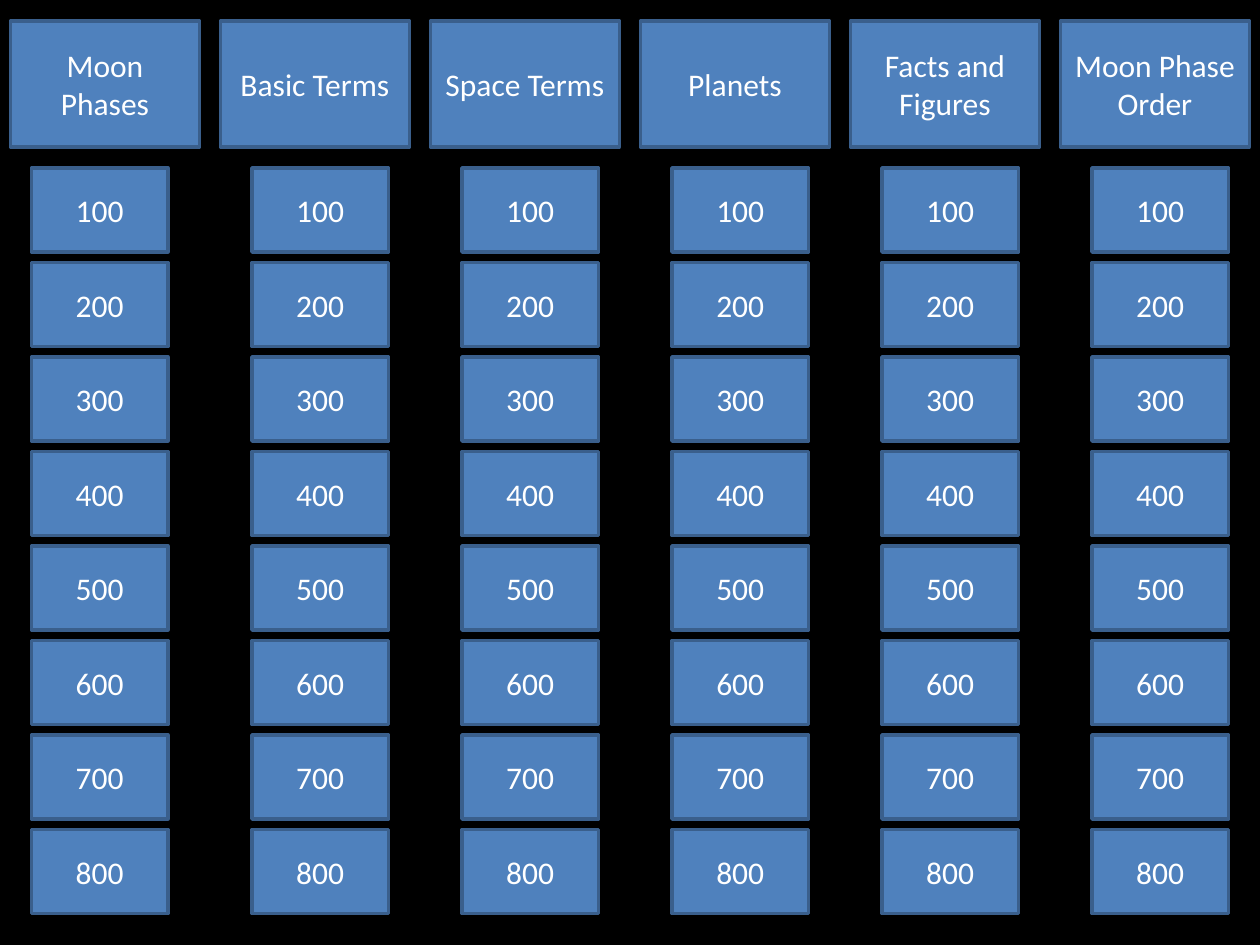
from dataclasses import dataclass

from pptx import Presentation
from pptx.dml.color import RGBColor
from pptx.enum.shapes import MSO_SHAPE
from pptx.enum.text import MSO_ANCHOR, PP_ALIGN
from pptx.slide import Slide
from pptx.util import Inches, Pt

RECTANGLE = MSO_SHAPE.RECTANGLE
MIDDLE = MSO_ANCHOR.MIDDLE
CENTER = PP_ALIGN.CENTER

BLACK, WHITE, BLUE, DARK_BLUE = "000000", "FFFFFF", "4F81BD", "3A5F8C"

# The board is a grid of 120 by 90 units, twelve to the inch
UNIT = Inches(1) // 12
SLIDE_WIDTH, SLIDE_HEIGHT = 120, 90
CATEGORIES = ["Moon Phases", "Basic Terms", "Space Terms", "Planets",
              "Facts and Figures", "Moon Phase Order"]
POINTS = range(100, 900, 100)
COLUMN_STEP = SLIDE_WIDTH // len(CATEGORIES)
ROW_STEP = 9


@dataclass(frozen=True)
class TileStyle:
    left: int
    top: int
    width: int
    height: int


HEADER = TileStyle(left=1, top=2, width=18, height=12)
VALUE = TileStyle(left=4, top=16, width=13, height=8)


def color(hex_value: str) -> RGBColor:
    return RGBColor.from_string(hex_value)


def write_text(shape, text: str, *, size: int = 18, font: str = "Calibri",
               text_color: str = WHITE) -> None:
    frame = shape.text_frame
    frame.word_wrap = True
    frame.vertical_anchor = MIDDLE
    paragraph = frame.paragraphs[0]
    paragraph.alignment = CENTER
    run = paragraph.add_run()
    run.text = text
    run.font.size = Pt(size)
    run.font.name = font
    run.font.color.rgb = color(text_color)


def add_tile(slide: Slide, style: TileStyle, text: str, column: int,
             row: int = 0, shift: int = 0) -> None:
    left = style.left + column * COLUMN_STEP + shift
    top = style.top + row * ROW_STEP
    shape = slide.shapes.add_shape(
        RECTANGLE, left * UNIT, top * UNIT, style.width * UNIT, style.height * UNIT)
    shape.shadow.inherit = False
    shape.fill.solid()
    shape.fill.fore_color.rgb = color(BLUE)
    shape.line.color.rgb = color(DARK_BLUE)
    shape.line.width = Pt(2)
    write_text(shape, text)


def main() -> None:
    presentation = Presentation()
    presentation.slide_width = SLIDE_WIDTH * UNIT
    presentation.slide_height = SLIDE_HEIGHT * UNIT
    slide = presentation.slides.add_slide(presentation.slide_layouts[6])
    slide.background.fill.solid()
    slide.background.fill.fore_color.rgb = color(BLACK)

    for column, category in enumerate(CATEGORIES):
        # Category header
        add_tile(slide, HEADER, category, column)
        # Point values; the first column sits one unit further left
        shift = -1 if column == 0 else 0
        for row, points in enumerate(POINTS):
            add_tile(slide, VALUE, str(points), column, row, shift)

    presentation.save("out.pptx")


if __name__ == "__main__":
    main()
